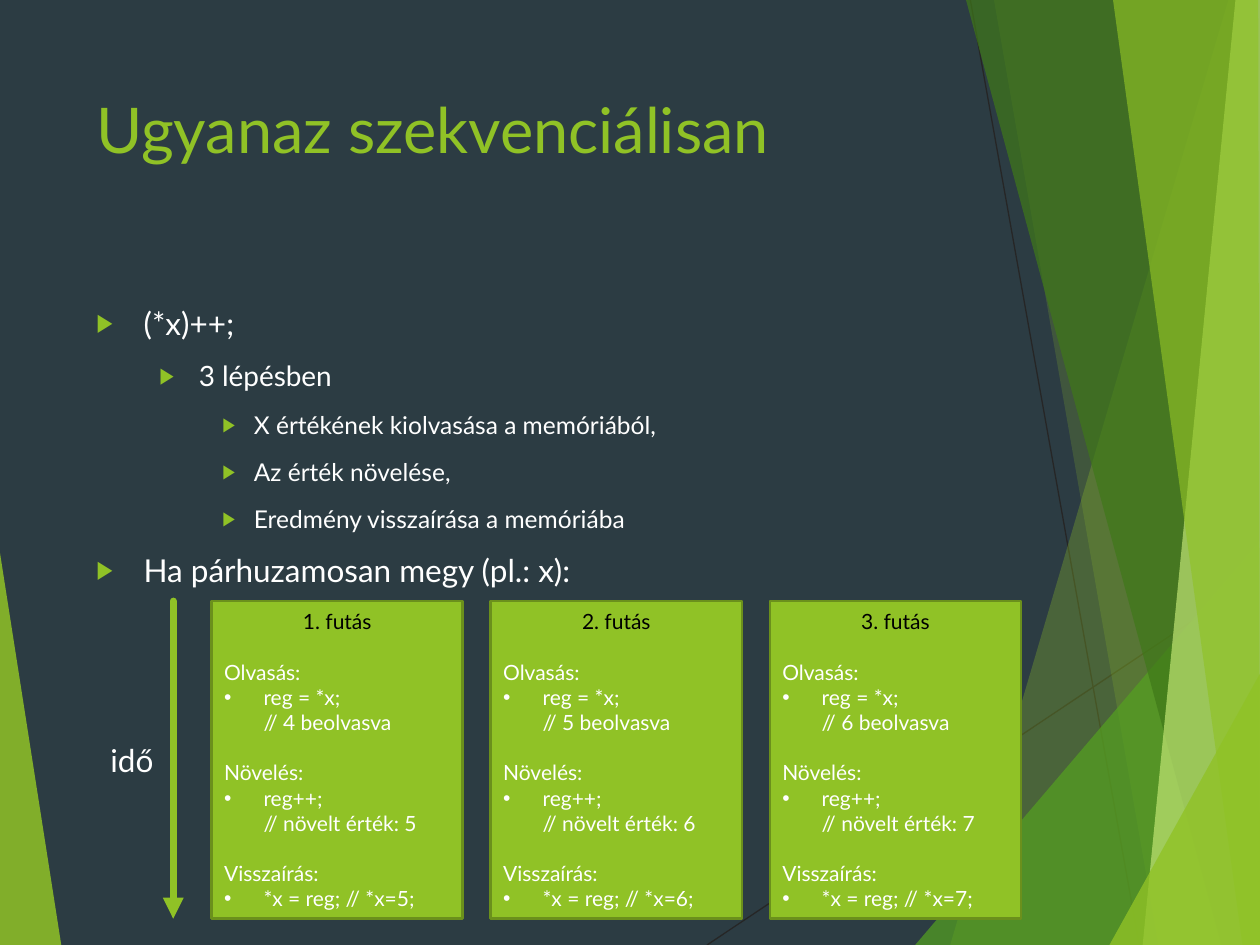
"""Builds a slide that steps through a sequential increment in three runs."""
from lxml.etree import SubElement
from pptx import Presentation
from pptx.dml.color import RGBColor
from pptx.enum.shapes import MSO_CONNECTOR, MSO_SHAPE
from pptx.enum.text import MSO_ANCHOR, PP_ALIGN
from pptx.oxml.ns import qn
from pptx.util import Pt

FONT = "Lato"
GREEN, WHITE, BLACK = "90C226", "FFFFFF", "000000"
WIDTH, HEIGHT = 720, 540
LINE_HEIGHT = 14.4

THIN_LINES = [((404, 540), (720, 329)), ((554.5, 0), (651, 540))]
FACETS = [
    ([(0, 316), (35, 540), (0, 540)], GREEN, 85),
    ([(702, 0), (543, 540), (720, 540), (720, 0)], GREEN, 30),
    ([(567.5, 0), (661.5, 540), (720, 540), (720, 0)], GREEN, 20),
    ([(523, 540), (720, 309), (720, 540)], "54A021", 72),
    ([(552, 0), (698.5, 540), (720, 540), (720, 0)], "3F7819", 70),
    ([(706.5, 0), (653, 540), (720, 540), (720, 0)], "C0E474", 70),
    ([(636, 0), (710, 540), (720, 540), (719, 0)], GREEN, 65),
    ([(634.5, 540), (720, 385), (720, 540)], GREEN, 80),
]
OUTLINE = [
    (0, "(*x)++;"),
    (1, "3 lépésben"),
    (2, "X értékének kiolvasása a memóriából,"),
    (2, "Az érték növelése,"),
    (2, "Eredmény visszaírása a memóriába"),
    (0, "Ha párhuzamosan megy (pl.: x):"),
]
LEVELS = [(18, 27, 27), (16, 58.5, 22.5), (14, 90, 18)]


def color(hex_value):
    """Return the colour for a hex string."""
    return RGBColor.from_string(hex_value)


def apply(target, values):
    """Set every attribute in a dict of format values."""
    for name, value in values.items():
        setattr(target, name, value)


def set_bullet(paragraph, character, left, hanging, hex_value=None, percent=None):
    """Give a paragraph a hanging bullet."""
    properties = paragraph._p.get_or_add_pPr()
    properties.set("marL", str(Pt(left)))
    properties.set("indent", str(-Pt(hanging)))
    if hex_value:
        bullet_color = SubElement(properties, qn("a:buClr"))
        SubElement(bullet_color, qn("a:srgbClr"), val=hex_value)
    if percent:
        SubElement(properties, qn("a:buSzPct"), val=str(percent * 1000))
    SubElement(properties, qn("a:buFont"), typeface="Arial")
    SubElement(properties, qn("a:buChar"), char=character)


def add_paragraph(frame, text, size, hex_value, **layout):
    """Write text in the first empty paragraph or in a new one."""
    first = frame.paragraphs[0]
    paragraph = frame.add_paragraph() if first.runs else first
    paragraph.text = text
    apply(paragraph, {"alignment": PP_ALIGN.LEFT, **layout})
    for run in paragraph.runs:
        apply(run.font, {"name": FONT, "size": Pt(size)})
        run.font.color.rgb = color(hex_value)
    for line_break in paragraph._p.findall(qn("a:br")):
        SubElement(line_break, qn("a:rPr"), sz=str(size * 100))
    return paragraph


def add_text_box(slide, left, top, width, height, wrap=True):
    """Add a text box and return its text frame."""
    frame = slide.shapes.add_textbox(Pt(left), Pt(top), Pt(width), Pt(height)).text_frame
    apply(frame, {"word_wrap": wrap, "vertical_anchor": MSO_ANCHOR.TOP})
    return frame


def add_line(slide, start, end, hex_value, weight, arrow=False):
    """Add a straight line, with an arrowhead at its end if asked."""
    connector = slide.shapes.add_connector(
        MSO_CONNECTOR.STRAIGHT, *(Pt(value) for value in (*start, *end)))
    connector.line.color.rgb = color(hex_value)
    connector.line.width = Pt(weight)
    if arrow:
        outline = connector.line._get_or_add_ln()
        outline.set("cap", "rnd")
        SubElement(outline, qn("a:tailEnd"), type="triangle")
    SubElement(connector._element.spPr, qn("a:effectLst"))


def add_facet(slide, points, hex_value, opacity):
    """Add a translucent polygon without an outline."""
    builder = slide.shapes.build_freeform(*points[0], scale=Pt(1))
    builder.add_line_segments(points[1:], close=True)
    shape = builder.convert_to_shape()
    shape.shadow.inherit = False
    shape.fill.solid()
    shape.fill.fore_color.rgb = color(hex_value)
    shape.line.fill.background()
    fill_color = shape._element.spPr.find(qn("a:solidFill"))[0]
    SubElement(fill_color, qn("a:alpha"), val=str(opacity * 1000))


def add_outline(slide):
    """Add the bulleted outline."""
    frame = add_text_box(slide, 48, 170, 500, 327)
    for level, text in OUTLINE:
        size, left, hanging = LEVELS[level]
        paragraph = add_paragraph(frame, text, size, WHITE, level=level, space_before=Pt(10))
        set_bullet(paragraph, "▶", left, hanging, GREEN, 80)


def add_run_box(slide, left, number):
    """Add the box that lists the steps of one run."""
    shape = slide.shapes.add_shape(
        MSO_SHAPE.RECTANGLE, Pt(left), Pt(343.5), Pt(143.5), Pt(181.5))
    shape.shadow.inherit = False
    shape.fill.solid()
    shape.fill.fore_color.rgb = color(GREEN)
    shape.line.color.rgb = color("6B901C")
    shape.line.width = Pt(1.5)
    frame = shape.text_frame
    apply(frame, {"word_wrap": True, "vertical_anchor": MSO_ANCHOR.MIDDLE})
    add_paragraph(frame, f"{number}. futás", 12, BLACK, alignment=PP_ALIGN.CENTER)
    before, after = number + 3, number + 4
    steps = [
        ("Olvasás:", f"reg = *x;\v// {before} beolvasva"),
        ("Növelés:", f"reg++;\v// növelt érték: {after}"),
        ("Visszaírás:", f"*x = reg; // *x={after};"),
    ]
    for heading, code in steps:
        add_paragraph(frame, heading, 12, WHITE, space_before=Pt(LINE_HEIGHT))
        set_bullet(add_paragraph(frame, code, 12, WHITE), "•", 22.5, 22.5)


def main():
    """Build and save the slide."""
    presentation = Presentation()
    apply(presentation, {"slide_width": Pt(WIDTH), "slide_height": Pt(HEIGHT)})
    slide = presentation.slides.add_slide(presentation.slide_layouts[6])
    slide.background.fill.solid()
    slide.background.fill.fore_color.rgb = color("2C3C43")
    for start, end in THIN_LINES:
        add_line(slide, start, end, "262626", 0.75)
    for points, hex_value, opacity in FACETS:
        add_facet(slide, points, hex_value, opacity)
    title = add_text_box(slide, 48, 48, 500, 104)
    add_paragraph(title, "Ugyanaz szekvenciálisan", 36, GREEN)
    add_outline(slide)
    for index in range(3):
        add_run_box(slide, 121 + index * 159.5, index + 1)
    add_line(slide, (99, 343.5), (99, 525), GREEN, 4, arrow=True)
    add_paragraph(add_text_box(slide, 56, 420, 40, 29, wrap=False), "idő", 18, WHITE)
    presentation.save("out.pptx")


if __name__ == "__main__":
    main()
